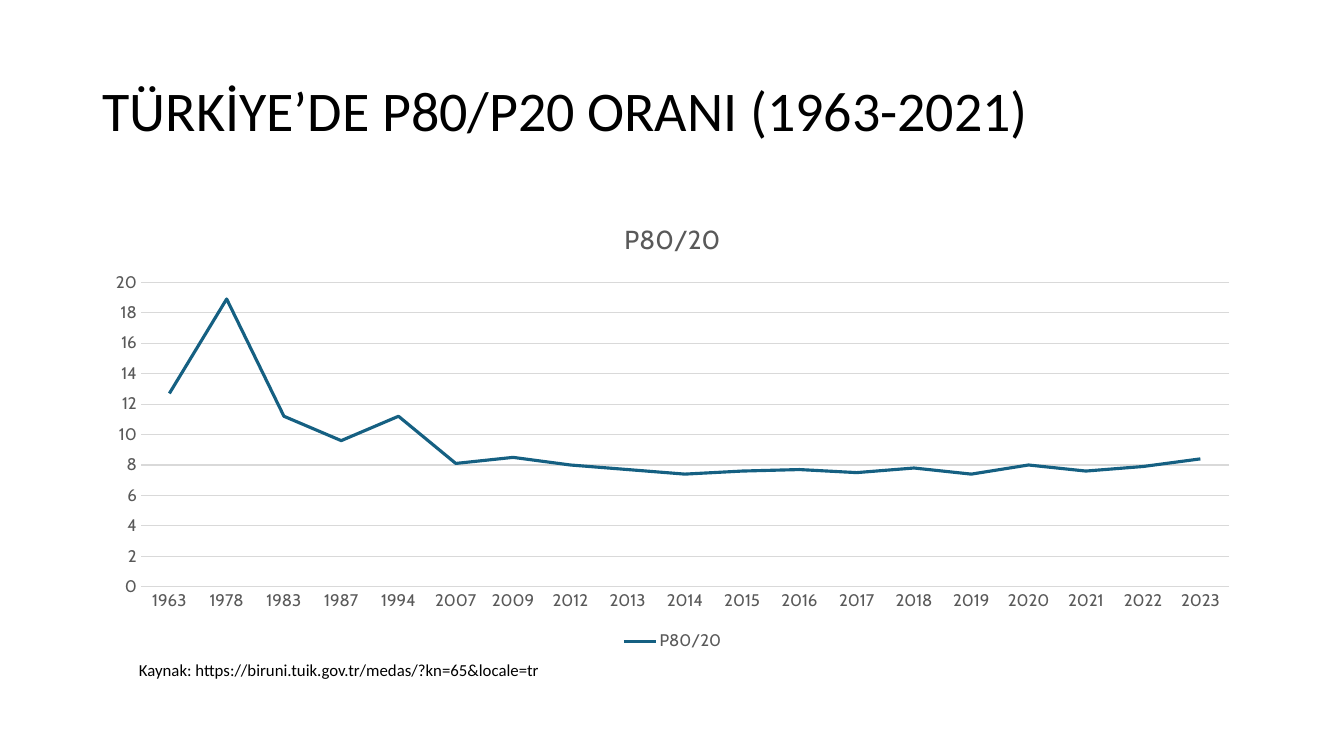
from dataclasses import dataclass

from pptx import Presentation
from pptx.chart.data import CategoryChartData
from pptx.dml.color import RGBColor
from pptx.enum.chart import XL_CHART_TYPE, XL_LEGEND_POSITION, XL_TICK_MARK
from pptx.enum.text import MSO_ANCHOR
from pptx.slide import Slide
from pptx.text.text import Font
from pptx.util import Inches, Pt

BLACK = RGBColor(0x00, 0x00, 0x00)
GRAY = RGBColor(0x59, 0x59, 0x59)
GRID_GRAY = RGBColor(0xD9, 0xD9, 0xD9)
RATIO_BLUE = RGBColor(0x15, 0x60, 0x82)
TEXT_FONT = "Calibri"
CHART_FONT = "Cabin"
RATIO_NAME = "P80/20"

RATIO_BY_YEAR = {
    "1963": 12.7, "1978": 18.9, "1983": 11.2, "1987": 9.6, "1994": 11.2,
    "2007": 8.1, "2009": 8.5, "2012": 8, "2013": 7.7, "2014": 7.4,
    "2015": 7.6, "2016": 7.7, "2017": 7.5, "2018": 7.8, "2019": 7.4,
    "2020": 8, "2021": 7.6, "2022": 7.9, "2023": 8.4,
}


@dataclass
class Caption:
    text: str
    left: float
    top: float
    width: float
    height: float
    size: float
    anchor: MSO_ANCHOR
    line_spacing: float


CAPTIONS = [
    Caption("TÜRKİYE’DE P80/P20 ORANI (1963-2021)",
            0.92, 0.4, 11.5, 1.45, 40, MSO_ANCHOR.MIDDLE, 0.9),
    Caption("Kaynak: https://biruni.tuik.gov.tr/medas/?kn=65&locale=tr",
            1.28, 6.5, 6.67, 0.3, 12, MSO_ANCHOR.TOP, 1.0),
]


def style_font(font: Font, name: str, size: float, color: RGBColor) -> None:
    font.name = name
    font.size = Pt(size)
    font.bold = False
    font.color.rgb = color


def add_caption(slide: Slide, caption: Caption) -> None:
    box = slide.shapes.add_textbox(Inches(caption.left), Inches(caption.top),
                                   Inches(caption.width), Inches(caption.height))
    frame = box.text_frame
    frame.word_wrap = True
    frame.vertical_anchor = caption.anchor
    paragraph = frame.paragraphs[0]
    paragraph.line_spacing = caption.line_spacing
    run = paragraph.add_run()
    run.text = caption.text
    style_font(run.font, TEXT_FONT, caption.size, BLACK)


def add_ratio_chart(slide: Slide) -> None:
    ratios = CategoryChartData()
    ratios.categories = list(RATIO_BY_YEAR)
    ratios.add_series(RATIO_NAME, list(RATIO_BY_YEAR.values()))
    chart = slide.shapes.add_chart(
        XL_CHART_TYPE.LINE, Inches(0.92), Inches(2), Inches(11.5), Inches(4.5), ratios
    ).chart
    style_font(chart.font, CHART_FONT, 10, BLACK)

    # Chart title and legend
    chart.has_title = True
    heading = chart.chart_title.text_frame.paragraphs[0].add_run()
    heading.text = RATIO_NAME
    style_font(heading.font, CHART_FONT, 18.6, GRAY)
    chart.chart_title.include_in_layout = False
    chart.has_legend = True
    chart.legend.position = XL_LEGEND_POSITION.BOTTOM
    chart.legend.include_in_layout = False
    style_font(chart.legend.font, CHART_FONT, 12, GRAY)

    # Axes and gridlines
    years, values = chart.category_axis, chart.value_axis
    for axis in (years, values):
        axis.major_tick_mark = axis.minor_tick_mark = XL_TICK_MARK.NONE
        style_font(axis.tick_labels.font, CHART_FONT, 12, GRAY)
    values.minimum_scale, values.maximum_scale, values.major_unit = 0, 20, 2
    values.has_major_gridlines = True
    values.format.line.fill.background()
    for line in (years.format.line, values.major_gridlines.format.line):
        line.color.rgb = GRID_GRAY
        line.width = Pt(0.75)

    # Ratio line
    plot = chart.plots[0]
    plot.vary_by_categories = False
    ratio = plot.series[0]
    ratio.smooth = False
    ratio.format.line.color.rgb = RATIO_BLUE
    ratio.format.line.width = Pt(2.25)


def main() -> None:
    presentation = Presentation()
    presentation.slide_width = Inches(13.33)
    presentation.slide_height = Inches(7.5)
    slide = presentation.slides.add_slide(presentation.slide_layouts[6])
    for caption in CAPTIONS:
        add_caption(slide, caption)
    add_ratio_chart(slide)
    presentation.save("out.pptx")


if __name__ == "__main__":
    main()
